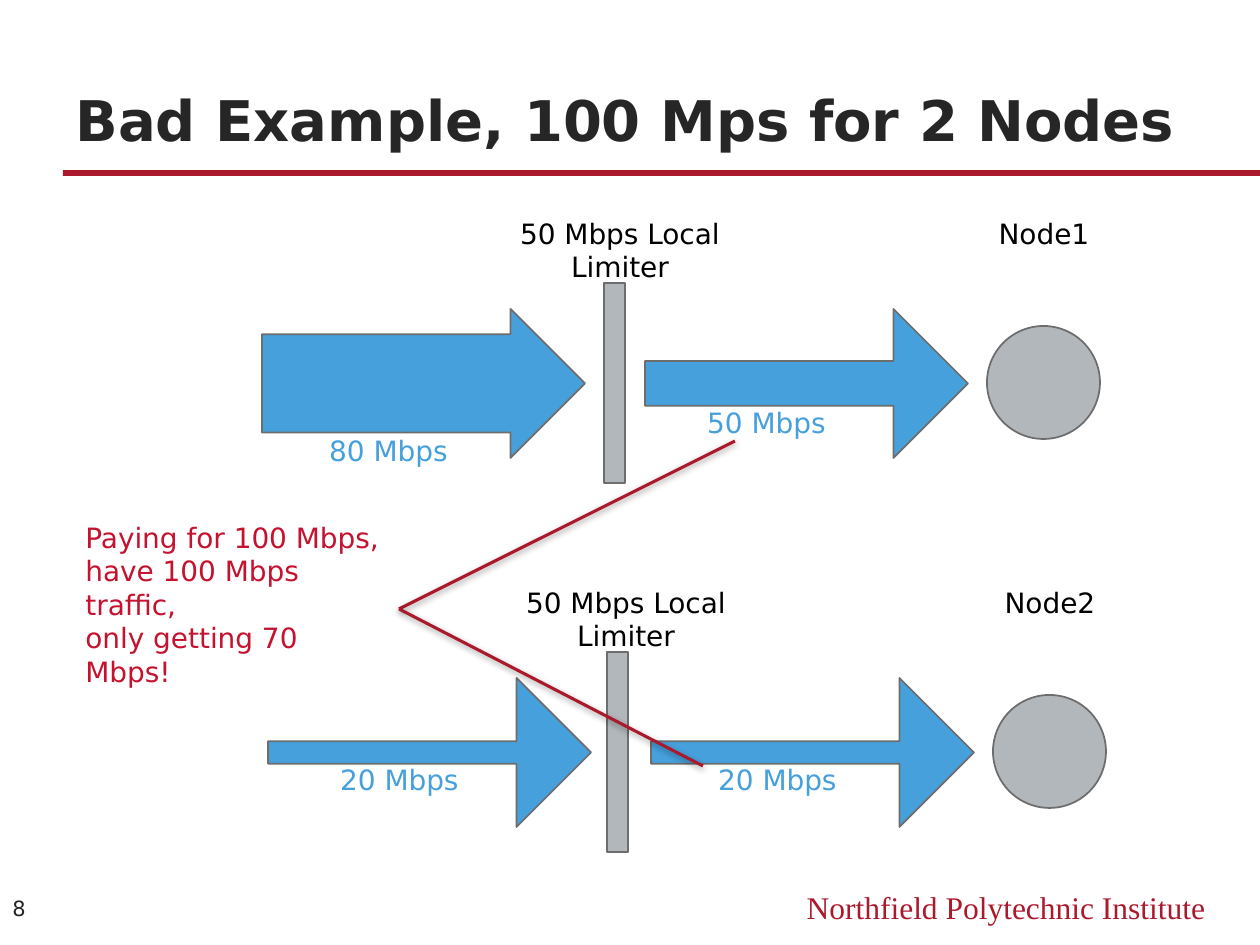
from dataclasses import dataclass

from lxml import etree
from pptx import Presentation
from pptx import util as u
from pptx.dml.color import RGBColor
from pptx.enum import shapes, text
from pptx.oxml import ns

SCALE = 914400 / 126
SHAPE = shapes.MSO_SHAPE
ALIGN = text.PP_ALIGN
ANCHOR = text.MSO_ANCHOR


def px(n):
    """Turn px into EMU."""
    return u.Emu(round(n * SCALE))


@dataclass(frozen=True)
class Theme:
    """Colours, fonts and type sizes."""
    crimson: str = "AB192D"
    alert: str = "C4122F"
    ink: str = "262626"
    black: str = "000000"
    blue: str = "46A0DC"
    grey: str = "B2B7BB"
    edge: str = "6D6D6D"
    sans: str = "DejaVu Sans"
    serif: str = "Times New Roman"
    title: int = 32
    footer: int = 18
    body: int = 16
    small: int = 12


def write(tf, content, *, size, color, font, bold=False, align=ALIGN.LEFT):
    """Fill a text frame, one paragraph for each line."""
    for i, line in enumerate(content.split("\n")):
        p = tf.paragraphs[0] if i == 0 else tf.add_paragraph()
        p.alignment = align
        r = p.add_run()
        r.text = line
        r.font.size, r.font.name, r.font.bold = u.Pt(size), font, bold
        r.font.color.rgb = RGBColor.from_string(color)


class Deck:
    """Holds the theme and the current slide."""

    def __init__(self, prs, theme):
        """Start a blank slide."""
        self.t = theme
        self.s = prs.slides.add_slide(prs.slide_layouts[6])

    def text(self, content, x, y, w, h, *, wrap=False, anchor=ANCHOR.TOP, **fmt):
        """Add a text box."""
        tf = self.s.shapes.add_textbox(*map(px, (x, y, w, h))).text_frame
        tf.word_wrap, tf.vertical_anchor = wrap, anchor
        look = dict(size=self.t.body, color=self.t.black, font=self.t.sans)
        write(tf, content, **{**look, **fmt})

    def shape(self, kind, x, y, w, h, fill, *, edge=True, adj=()):
        """Add a filled preset shape."""
        sp = self.s.shapes.add_shape(kind, *map(px, (x, y, w, h)))
        sp.shadow.inherit = False
        sp.fill.solid()
        sp.fill.fore_color.rgb = RGBColor.from_string(fill)
        if edge:
            sp.line.color.rgb = RGBColor.from_string(self.t.edge)
            sp.line.width = u.Pt(1)
        else:
            sp.line.fill.background()
        for i, value in enumerate(adj):
            sp.adjustments[i] = value

    def arrow(self, x, y, thickness):
        """Add a traffic arrow with a shaft of the given thickness."""
        self.shape(SHAPE.RIGHT_ARROW, x, y, 323, 149, self.t.blue, adj=(thickness, 0.5))

    def line(self, x1, y1, x2, y2):
        """Add a callout line with a soft shadow."""
        sp = self.s.shapes.add_connector(
            shapes.MSO_CONNECTOR.STRAIGHT, *map(px, (x1, y1, x2, y2)))
        sp.line.color.rgb = RGBColor.from_string(self.t.crimson)
        sp.line.width = u.Pt(1.75)
        effects = etree.SubElement(sp._element.spPr, ns.qn("a:effectLst"))
        shadow = etree.SubElement(
            effects, ns.qn("a:outerShdw"), blurRad=str(u.Pt(4)), dist=str(u.Pt(1)),
            dir=str(88 * 60000), rotWithShape="0")
        color = etree.SubElement(shadow, ns.qn("a:srgbClr"), val=self.t.black)
        etree.SubElement(color, ns.qn("a:alpha"), val="40000")

    def lane(self, node, dx, y, bar_x, shafts, rates):
        """Add one limiter lane: arrow, limiter, arrow and node."""
        t = self.t
        self.shape(SHAPE.OVAL, 987 + dx, y + 116, 113, 113, t.grey)
        self.shape(SHAPE.RECTANGLE, bar_x, y + 73, 21, 200, t.grey)
        for x, thickness in zip((262, 645), shafts):
            self.arrow(x + dx, y + 99, thickness)
        self.text(node, 976 + dx, y, 136, 53, align=ALIGN.CENTER)
        self.text("50 Mbps Local Limiter", 473 + dx, y, 294, 53, align=ALIGN.CENTER)
        for rate, x, top in rates:
            self.text(rate, x, top, 189, 53, color=t.blue, align=ALIGN.CENTER)


def main():
    """Build the slide."""
    prs = Presentation()
    prs.slide_width, prs.slide_height = px(1260), px(945)
    t = Theme()
    d = Deck(prs, t)
    d.shape(SHAPE.RECTANGLE, 63, 170, 1197, 6, t.crimson, edge=False)
    d.text("Northfield Polytechnic Institute", 756, 882, 462, 50, wrap=True,
           size=t.footer, color=t.crimson, font=t.serif, align=ALIGN.RIGHT)
    d.text("Bad Example, 100 Mps for 2 Nodes", 63, 48, 1134, 111, wrap=True,
           anchor=ANCHOR.BOTTOM, size=t.title, color=t.ink, bold=True)
    d.text("8", 0, 881, 63, 54, wrap=True, anchor=ANCHOR.MIDDLE,
           size=t.small, color=t.ink)
    d.lane("Node1", 0, 210, 604, (0.66, 0.3),
           [("80 Mbps", 294, 427), ("50 Mbps", 672, 399)])
    d.lane("Node2", 6, 579, 607, (0.15, 0.15),
           [("20 Mbps", 305, 756), ("20 Mbps", 683, 756)])
    d.text("Paying for 100 Mbps,\nhave 100 Mbps traffic,\nonly getting 70 Mbps!",
           73, 514, 325, 126, color=t.alert)
    for x, y in ((735, 441), (703, 766)):
        d.line(x, y, 399, 609)
    prs.save("out.pptx")


if __name__ == "__main__":
    main()
